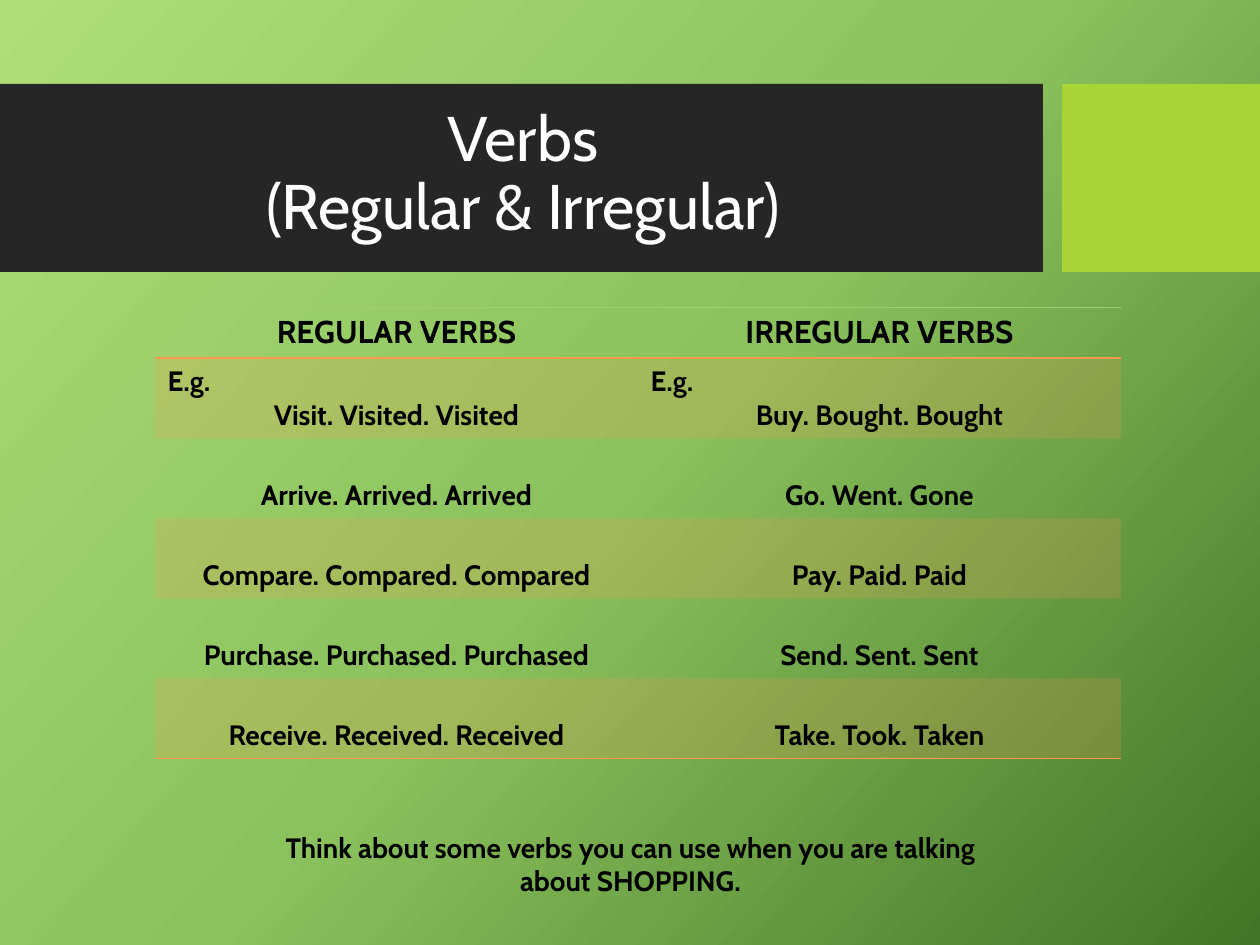
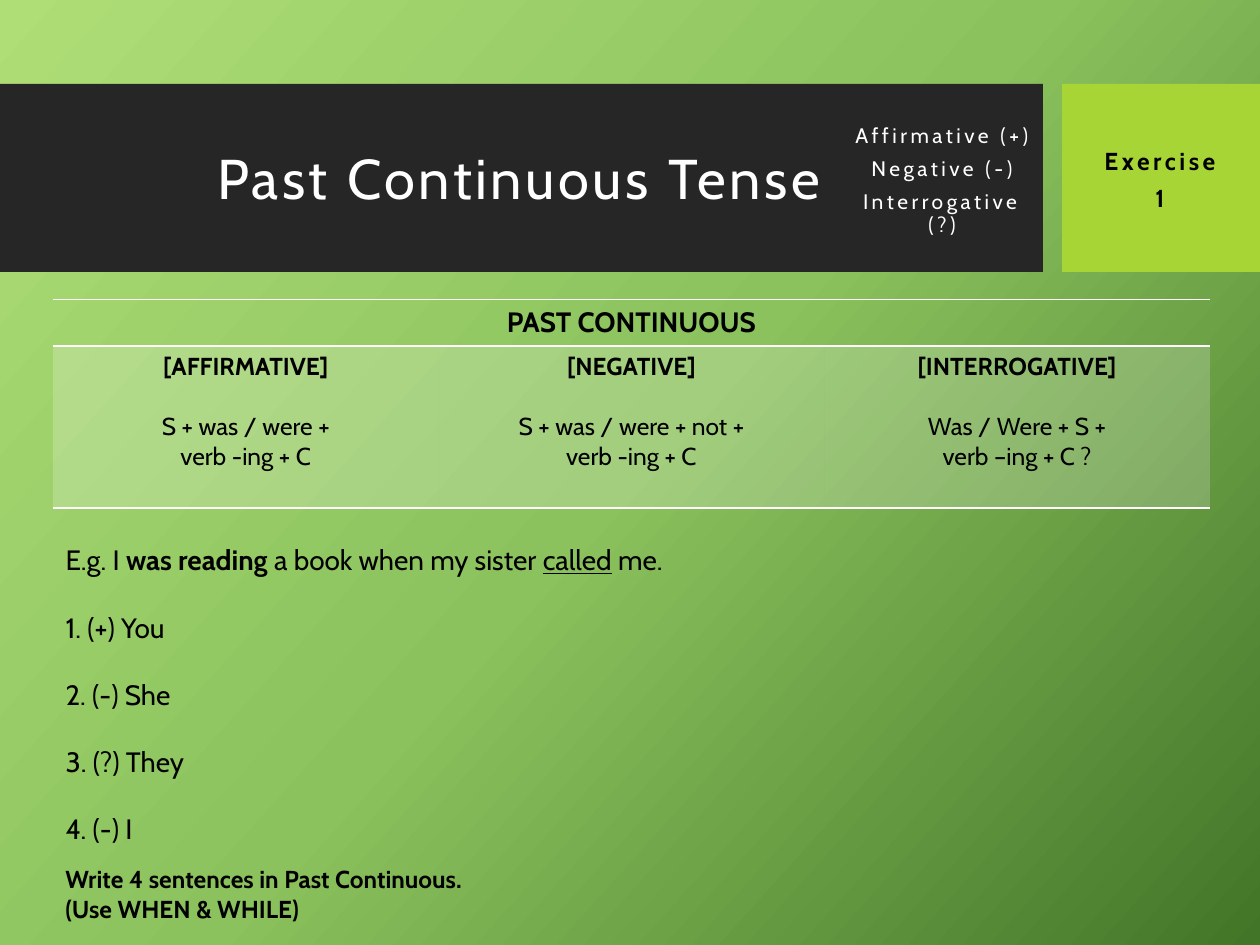
import pptx
import pptx.dml.color
import pptx.enum.shapes
import pptx.enum.text
import pptx.oxml
import pptx.oxml.ns
import pptx.util

qn = pptx.oxml.ns.qn
ALIGN = pptx.enum.text.PP_ALIGN
ANCHOR = pptx.enum.text.MSO_ANCHOR
PX = 914400 / 126
NO_STYLE = "{2D5ABB26-0587-4C30-8999-92F81FD0307C}"
TITLE_ONLY, TITLE_AND_BODY = 5, 1


def emu(*lengths):
    return [round(n * PX) for n in lengths]


def rgb(color):
    return pptx.dml.color.RGBColor.from_string(color)


def sub(parent, tag, **attrs):
    """Append an XML child such as a:ln to parent."""
    el = parent.makeelement(qn(tag), attrs)
    parent.append(el)
    return el


def write(tf, text, size=16, color="000000", bold=False, align=ALIGN.CENTER,
          line=None, before=0, after=0, spacing=0, underline=False):
    """Add a paragraph; text is a string or a list of (text, run format)."""
    p = tf.paragraphs[0]
    if p.runs:
        p = tf.add_paragraph()
    pPr = p._p.get_or_add_pPr()
    pPr.set("marL", "0")
    pPr.set("indent", "0")
    p.alignment = align
    p.space_before = pptx.util.Pt(before)
    p.space_after = pptx.util.Pt(after)
    if line:
        p.line_spacing = line
    sub(pPr, "a:buNone")
    for part, fmt in [(text, {})] if isinstance(text, str) else text:
        for i, piece in enumerate(part.split("\n")):
            if i:
                p.add_line_break()
            r = p.add_run()
            r.text = piece
            r.font.name = Deck.FONT
            r.font.size = pptx.util.Pt(size)
            r.font.color.rgb = rgb(color)
            r.font.bold = fmt.get("bold", bold)
            r.font.underline = fmt.get("underline", underline)
            if spacing:
                r._r.get_or_add_rPr().set("spc", str(spacing * 100))
    return p


class Deck:
    FONT = "Cabin"
    DARK, LIME, WHITE, ORANGE = "262626", "A7D535", "FFFFFF", "FD9850"
    BACKGROUND = [(0, "AFDE77"), (50, "8BC25D"), (100, "437528")]
    BANDS = [(0, 1043, DARK), (1062, 198, LIME)]
    BAND_TOP, BAND_HEIGHT = 84, 188

    def __init__(self):
        self.prs = pptx.Presentation()
        self.prs.slide_width, self.prs.slide_height = emu(1260, 945)
        self.slide = None
        self.paint_background()

    def paint_background(self):
        master = self.prs.slide_master
        master.background.fill.gradient()
        grad = master._element.find(".//" + qn("p:bg")).find(".//" + qn("a:gradFill"))
        stops = grad.find(qn("a:gsLst"))
        for old in list(stops):
            stops.remove(old)
        for pos, color in self.BACKGROUND:
            sub(sub(stops, "a:gs", pos=str(pos * 1000)), "a:srgbClr", val=color)
        grad.find(qn("a:lin")).set("ang", str(42 * 60000))

    def add_slide(self, layout):
        self.slide = self.prs.slides.add_slide(self.prs.slide_layouts[layout])
        for left, width, color in self.BANDS:
            self.band(left, width, color)

    def band(self, left, width, color):
        """Draw a header band behind everything else."""
        sp = self.slide.shapes.add_shape(
            pptx.enum.shapes.MSO_SHAPE.RECTANGLE,
            *emu(left, self.BAND_TOP, width, self.BAND_HEIGHT))
        sp.shadow.inherit = False
        sp.fill.solid()
        sp.fill.fore_color.rgb = rgb(color)
        sp.line.fill.background()
        tree = self.slide.shapes._spTree
        tree.remove(sp._element)
        tree.insert(2, sp._element)

    def frame(self, sp, box, anchor):
        """Place a shape and return its prepared text frame."""
        sp.left, sp.top, sp.width, sp.height = emu(*box)
        tf = sp.text_frame
        tf.word_wrap = True
        tf.auto_size = pptx.enum.text.MSO_AUTO_SIZE.NONE
        tf.vertical_anchor = anchor
        return tf

    def title(self, text, box, **fmt):
        tf = self.frame(self.slide.shapes.title, box, ANCHOR.MIDDLE)
        write(tf, text, color=self.WHITE, line=0.9, **fmt)

    def body(self, lines, box, **fmt):
        tf = self.frame(self.slide.placeholders[1], box, ANCHOR.TOP)
        for text in lines:
            write(tf, text, **fmt)

    def text(self, lines, box, anchor=ANCHOR.TOP, **fmt):
        sp = self.slide.shapes.add_textbox(*emu(*box))
        tf = self.frame(sp, box, anchor)
        for text in lines:
            write(tf, text, **fmt)

    def table(self, left, top, width, cols, heights):
        sp = self.slide.shapes.add_table(
            len(heights), cols, *emu(left, top, width, sum(heights)))
        table = sp.table
        table.first_row = table.horz_banding = False
        table._tbl.tblPr.find(qn("a:tableStyleId")).text = NO_STYLE
        for row, height in zip(table.rows, heights):
            row.height = emu(height)[0]
        return table

    def rule_table(self, table, color, top_color):
        """Rule the header and the last row, and tint every odd row."""
        last = len(table.rows) - 1
        for i, row in enumerate(table.rows):
            for cell in row.cells:
                if i == 0:
                    self.border(cell, "a:lnT", top_color, 0.5)
                if i in (0, last):
                    self.border(cell, "a:lnB", color, 1)
                if i % 2:
                    cell.fill.solid()
                    cell.fill.fore_color.rgb = rgb(color)
                    clr = cell._tc.tcPr.find(qn("a:solidFill"))[0]
                    sub(clr, "a:alpha", val="20000")
                else:
                    cell.fill.background()

    def border(self, cell, side, color, width):
        ln = sub(cell._tc.get_or_add_tcPr(), side, w=str(pptx.util.Pt(width)))
        sub(sub(ln, "a:solidFill"), "a:srgbClr", val=color)


def verbs_slide(deck):
    deck.add_slide(TITLE_ONLY)
    deck.title("Verbs\n(Regular & Irregular)", (0, 101, 1046, 149), size=36)
    deck.text(["Think about some verbs you can use when you are talking",
               "about SHOPPING."], (32, 824, 1197, 81), bold=True)

    headings = ("REGULAR VERBS", "IRREGULAR VERBS")
    verbs = [("Visit. Visited. Visited", "Buy. Bought. Bought"),
             ("Arrive. Arrived. Arrived", "Go. Went. Gone"),
             ("Compare. Compared. Compared", "Pay. Paid. Paid"),
             ("Purchase. Purchased. Purchased", "Send. Sent. Sent"),
             ("Receive. Received. Received", "Take. Took. Taken")]
    table = deck.table(155, 307, 966, 2, [51] + [80] * len(verbs))
    deck.rule_table(table, deck.ORANGE, "A0D070")
    for i, row in enumerate([headings] + verbs):
        for j, text in enumerate(row):
            cell = table.cell(i, j)
            cell.vertical_anchor = ANCHOR.BOTTOM if i else ANCHOR.MIDDLE
            if i == 1:
                write(cell.text_frame, "E.g.", bold=True, align=ALIGN.LEFT)
            write(cell.text_frame, text, size=16 if i else 18, bold=True)


def past_continuous_slide(deck):
    deck.add_slide(TITLE_AND_BODY)
    header = dict(line=0.9, after=6, spacing=2)
    deck.title("Past Continuous Tense", (-4, 86, 1046, 190),
               size=32, after=6, spacing=2)
    deck.text(["Affirmative (+)", "Negative (-)", "Interrogative (?)"],
              (842, 86, 200, 190), ANCHOR.MIDDLE,
              size=12, color=deck.WHITE, **header)
    deck.text(["Exercise", "1"], (1060, 86, 200, 190), ANCHOR.MIDDLE,
              size=14, bold=True, **header)

    forms = [("[AFFIRMATIVE]", "S + was / were +", "verb -ing + C"),
             ("[NEGATIVE]", "S + was / were + not +", "verb -ing + C"),
             ("[INTERROGATIVE]", "Was / Were + S +", "verb –ing + C ?")]
    table = deck.table(53, 299, 1157, len(forms), [47, 162])
    deck.rule_table(table, deck.WHITE, deck.WHITE)
    table.cell(0, 0).merge(table.cell(0, len(forms) - 1))
    write(table.cell(0, 0).text_frame, "PAST CONTINUOUS", bold=True)
    for j, (name, start, end) in enumerate(forms):
        tf = table.cell(1, j).text_frame
        write(tf, name, size=14, bold=True)
        write(tf, start, size=14, before=17)
        write(tf, end, size=14)

    example = [("E.g. I ", {}), ("was reading ", {"bold": True}),
               ("a book when my sister ", {}),
               ("called", {"underline": True}), (" me.", {})]
    deck.body([example, "1. (+) You", "2. (-) She", "3. (?) They", "4. (-) I"],
              (53, 503, 1157, 352), align=ALIGN.JUSTIFY, line=2.0)
    deck.text(["Write 4 sentences in Past Continuous.", "(Use WHEN & WHILE)"],
              (53, 858, 1157, 72), size=14, bold=True, align=ALIGN.JUSTIFY)


def main():
    deck = Deck()
    verbs_slide(deck)
    past_continuous_slide(deck)
    deck.prs.save("out.pptx")


if __name__ == "__main__":
    main()
